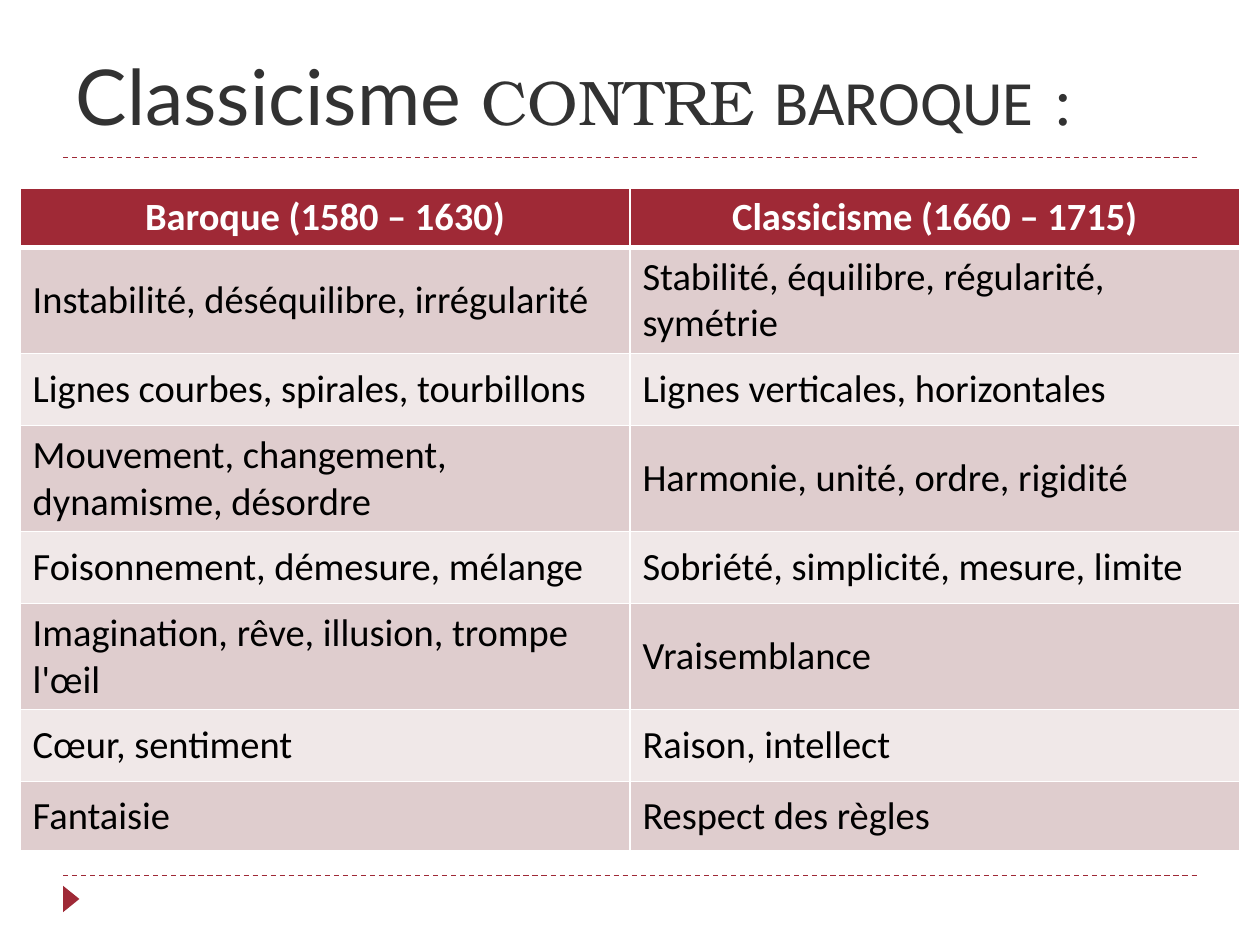
from dataclasses import dataclass

from lxml import etree
from pptx import Presentation
from pptx import util as u
from pptx.dml.color import RGBColor
from pptx.enum import dml, shapes, text
from pptx.oxml import ns


@dataclass(frozen=True)
class Theme:
    accent: str = "9F2936"
    title_color: str = "323232"
    body_color: str = "000000"
    white: str = "FFFFFF"
    bands: tuple = ("DFCDCE", "F0E8E8")
    font: str = "Calibri"
    title_font: str = "Lato"
    serif_font: str = "TeX Gyre Bonum"
    title_size: int = 44
    subtitle_size: int = 36
    table_size: int = 22


def add_run(paragraph, content, *, font, size, color, bold=False):
    run = paragraph.add_run()
    run.text = content
    run.font.name = font
    run.font.size = u.Pt(size)
    run.font.bold = bold
    run.font.color.rgb = RGBColor.from_string(color)


class SlideBuilder:
    """Draw styled elements on the current slide."""

    def __init__(self, slide, theme):
        self.slide = slide
        self.theme = theme

    def rule(self, top, left=0.5, right=9.5):
        line = self.slide.shapes.add_connector(
            shapes.MSO_CONNECTOR.STRAIGHT,
            u.Inches(left), u.Inches(top), u.Inches(right), u.Inches(top))
        line.line.color.rgb = RGBColor.from_string(self.theme.accent)
        line.line.width = u.Pt(0.75)
        line.line.dash_style = dml.MSO_LINE.DASH
        etree.SubElement(line._element.spPr, ns.qn("a:effectLst"))

    def marker(self, left, top, width, height):
        shape = self.slide.shapes.add_shape(
            shapes.MSO_SHAPE.ISOSCELES_TRIANGLE,
            *map(u.Inches, (left, top, width, height)))
        shape.rotation = 90
        shape.shadow.inherit = False
        shape.fill.solid()
        shape.fill.fore_color.rgb = RGBColor.from_string(self.theme.accent)
        shape.line.fill.background()

    def title(self, pieces, left, top, width, height):
        title = self.slide.shapes.title
        title.left, title.top, title.width, title.height = map(
            u.Inches, (left, top, width, height))
        frame = title.text_frame
        frame.word_wrap = True
        frame.auto_size = text.MSO_AUTO_SIZE.NONE
        frame.vertical_anchor = text.MSO_ANCHOR.BOTTOM
        paragraph = frame.paragraphs[0]
        paragraph.alignment = text.PP_ALIGN.LEFT
        for content, font, size in pieces:
            add_run(paragraph, content, font=font, size=size,
                    color=self.theme.title_color)

    def borders(self, cell, bottom):
        properties = cell._tc.get_or_add_tcPr()
        widths = {"lnL": 1, "lnR": 1, "lnT": 1, "lnB": bottom}
        for index, (side, width) in enumerate(widths.items()):
            border = etree.Element(ns.qn(f"a:{side}"), w=str(u.Pt(width)))
            fill = etree.SubElement(border, ns.qn("a:solidFill"))
            etree.SubElement(fill, ns.qn("a:srgbClr"), val=self.theme.white)
            properties.insert(index, border)

    def cell(self, cell, content, row):
        theme = self.theme
        header = row == 0
        cell.vertical_anchor = text.MSO_ANCHOR.MIDDLE
        cell.fill.solid()
        cell.fill.fore_color.rgb = RGBColor.from_string(
            theme.accent if header else theme.bands[(row - 1) % 2])
        self.borders(cell, bottom=3 if header else 1)
        paragraph = cell.text_frame.paragraphs[0]
        paragraph.alignment = text.PP_ALIGN.CENTER if header else text.PP_ALIGN.LEFT
        add_run(paragraph, content, font=theme.font, size=theme.table_size,
                color=theme.white if header else theme.body_color, bold=header)

    def table(self, rows, heights, left, top, column_width):
        columns = len(rows[0])
        table = self.slide.shapes.add_table(
            len(rows), columns, u.Inches(left), u.Inches(top),
            u.Inches(column_width * columns), u.Inches(sum(heights))).table
        for column in table.columns:
            column.width = u.Inches(column_width)
        for index, (contents, height) in enumerate(zip(rows, heights)):
            table.rows[index].height = u.Inches(height)
            for column, content in enumerate(contents):
                self.cell(table.cell(index, column), content, index)


COMPARISON = [
    ("Baroque (1580 – 1630)", "Classicisme (1660 – 1715)"),
    ("Instabilité, déséquilibre, irrégularité",
     "Stabilité, équilibre, régularité, symétrie"),
    ("Lignes courbes, spirales, tourbillons", "Lignes verticales, horizontales"),
    ("Mouvement, changement, dynamisme, désordre",
     "Harmonie, unité, ordre, rigidité"),
    ("Foisonnement, démesure, mélange", "Sobriété, simplicité, mesure, limite"),
    ("Imagination, rêve, illusion, trompe l'œil", "Vraisemblance"),
    ("Cœur, sentiment", "Raison, intellect"),
    ("Fantaisie", "Respect des règles"),
]


def main():
    presentation = Presentation()
    presentation.slide_width = u.Inches(10)
    presentation.slide_height = u.Inches(7.5)
    theme = Theme()
    builder = SlideBuilder(
        presentation.slides.add_slide(presentation.slide_layouts[5]), theme)

    for top in (6.95, 1.25):
        builder.rule(top)
    builder.marker(0.46, 7.07, 0.21, 0.13)
    builder.title([
        ("Classicisme", theme.title_font, theme.title_size),
        (" CONTRE ", theme.serif_font, theme.subtitle_size),
        ("BAROQUE", theme.font, theme.subtitle_size),
        (" :", theme.serif_font, theme.subtitle_size),
    ], 0.5, 0.24, 9, 0.93)
    heights = [0.46] + [0.84, 0.57] * 3 + [0.55]
    builder.table(COMPARISON, heights, left=0.16, top=1.49, column_width=4.84)
    presentation.save("out.pptx")


if __name__ == "__main__":
    main()
